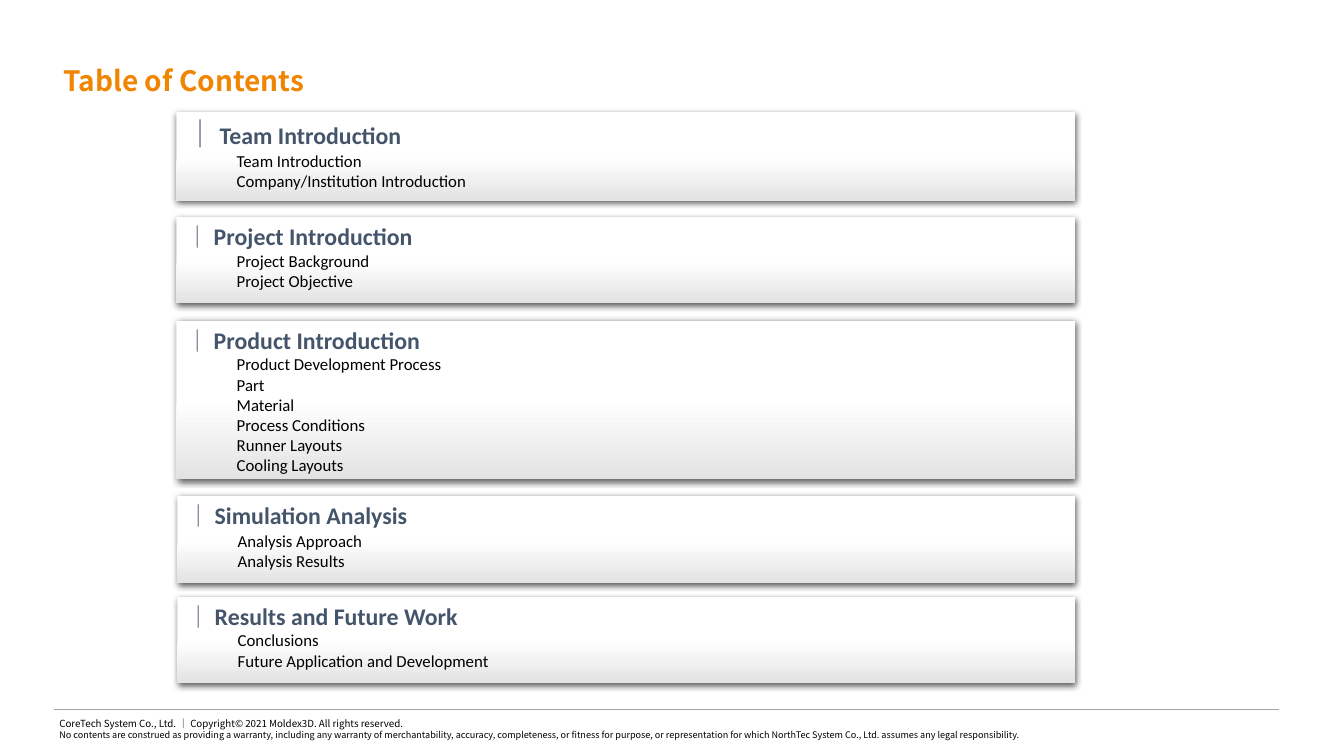
from lxml import etree
from pptx import Presentation
from pptx.dml.color import RGBColor
from pptx.enum import shapes, text
from pptx.oxml import ns, parse_xml
from pptx.util import Pt

HEX = {"title": "F08501", "head": "44546A", "body": "000000",
       "rule": "A5A5A5", "top": "FFFFFF", "base": "E3E3E3"}
SC, KR, CAL = "Noto Sans CJK SC", "Noto Sans CJK KR", "Calibri"
SHADE = ('<a:effectLst %s><a:outerShdw blurRad="57150" dist="19050" dir="5400000" '
         'algn="ctr" rotWithShape="0"><a:srgbClr val="000000"><a:alpha val="63000"/>'
         '</a:srgbClr></a:outerShdw></a:effectLst>' % ns.nsdecls("a"))


def write(para, words, size, face, tone, bold=False):
    run = para.add_run()
    run.text = words
    for key, val in {"size": Pt(size), "name": face, "bold": bold}.items():
        setattr(run.font, key, val)
    run.font.color.rgb = RGBColor.from_string(HEX[tone])
    east = etree.SubElement(run.font._element, ns.qn("a:ea"))
    east.set("typeface", face)


def add_text(left, top, wide, high, anchor):
    frame = slide.shapes.add_textbox(Pt(left), Pt(top), Pt(wide), Pt(high)).text_frame
    frame.word_wrap = True
    frame.vertical_anchor = anchor
    return frame


deck = Presentation()
deck.slide_width, deck.slide_height = Pt(960), Pt(540)
slide = deck.slides.add_slide(deck.slide_layouts[6])

# Footer
foot = add_text(35.3, 509, 769.7, 24.5, text.MSO_ANCHOR.TOP)
write(foot.paragraphs[0],
      "CoreTech System Co., Ltd. │ Copyright© 2021 Moldex3D. All rights reserved.",
      7, SC, "body")
write(foot.add_paragraph(),
      "No contents are construed as providing a warranty, including any warranty of "
      "merchantability, accuracy, completeness, or fitness for purpose, or representation "
      "for which NorthTec System Co., Ltd. assumes any legal responsibility.",
      6.5, SC, "body")
rule = slide.shapes.add_connector(shapes.MSO_CONNECTOR.STRAIGHT,
                                  Pt(38.9), Pt(506.9), Pt(913.7), Pt(506.9))
rule.line.color.rgb = RGBColor.from_string(HEX["rule"])
rule.line.width = Pt(1)
etree.SubElement(rule._element.spPr, ns.qn("a:effectLst"))

# Title
title = add_text(40.3, 38.2, 874, 41.8, text.MSO_ANCHOR.MIDDLE)
for side, gap in {"left": 5, "right": 5, "top": 2.9, "bottom": 2.9}.items():
    setattr(title, "margin_" + side, Pt(gap))
title.paragraphs[0].line_spacing = 0.9
write(title.paragraphs[0], "Table of Contents", 20, SC, "title", True)

# Panels: left, top, height, bar, bar size, heading, entries
panels = [
    (126, 79.9, 63.4, "│", 20, " Team Introduction",
     ["Team Introduction", "Company/Institution Introduction"]),
    (126, 154.8, 62, "│ ", 16, "Project Introduction",
     ["Project Background", "Project Objective"]),
    (126, 229, 113, "│ ", 16, "Product Introduction",
     ["Product Development Process", "Part", "Material", "Process Conditions",
      "Runner Layouts", "Cooling Layouts"]),
    (126.7, 354.2, 62.6, "│ ", 16, "Simulation Analysis",
     ["Analysis Approach", "Analysis Results"]),
    (126.7, 426.2, 62, "│ ", 16, "Results and Future Work",
     ["Conclusions", "Future Application and Development"]),
]
for left, top, high, bar, size, head, items in panels:
    panel = slide.shapes.add_shape(shapes.MSO_SHAPE.RECTANGLE,
                                   Pt(left), Pt(top), Pt(768.2 - left), Pt(high))
    panel.line.fill.background()
    panel.fill.gradient()
    panel.fill.gradient_angle = 270
    for stop, spot, tone in zip(panel.fill.gradient_stops, (0.5, 1), ("top", "base")):
        stop.position = spot
        stop.color.rgb = RGBColor.from_string(HEX[tone])
    panel._element.spPr.append(parse_xml(SHADE))

    frame = panel.text_frame
    frame.word_wrap = True
    frame.vertical_anchor = text.MSO_ANCHOR.TOP
    para = frame.paragraphs[0]
    para.alignment = text.PP_ALIGN.LEFT
    write(para, bar, size, KR, "head", True)
    write(para, head, 17, CAL, "head", True)
    for item in items:
        para = frame.add_paragraph()
        para.alignment = text.PP_ALIGN.LEFT
        para._p.get_or_add_pPr().set("marL", str(Pt(36)))
        if item == "Analysis Approach":
            para.line_spacing, para.space_before = 0.9, Pt(2.4)
        write(para, item, 12, CAL, "body")

deck.save("out.pptx")
